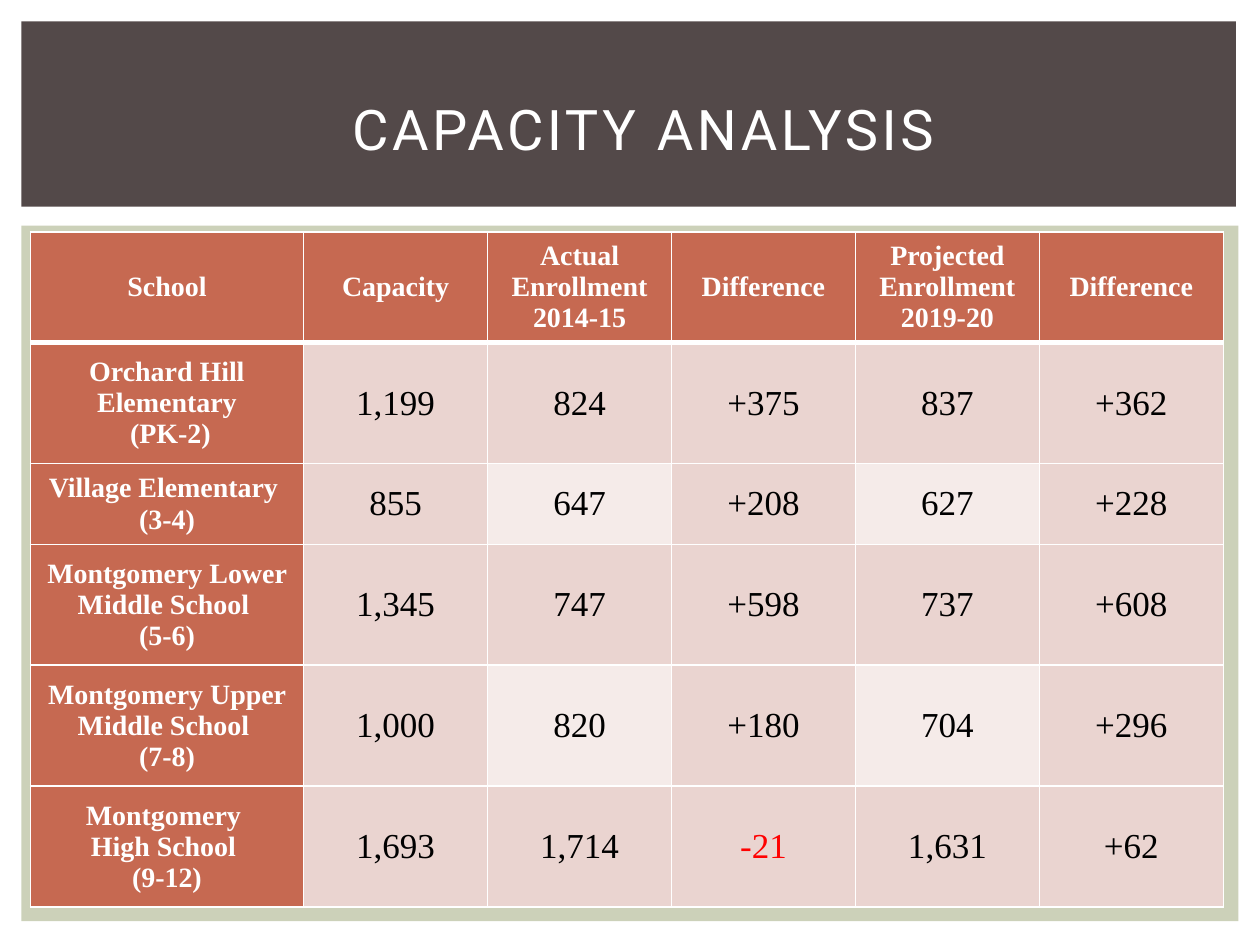
"""Build the capacity analysis slide: a title band above an enrollment table."""
import dataclasses

import lxml.etree
import pptx
import pptx.dml.color
import pptx.enum.shapes
import pptx.enum.text
import pptx.oxml.ns
import pptx.util

EMU_PER_PX = 9144
COLUMN_WIDTHS = [217] + [146] * 5
ROW_HEIGHTS = [88, 96, 64, 96, 96, 96]
ROWS = [
    ["School", "Capacity", "Actual\nEnrollment 2014-15", "Difference",
     "Projected Enrollment 2019-20", "Difference"],
    ["Orchard Hill Elementary\n (PK-2)", "1,199", "824", "+375", "837", "+362"],
    ["Village Elementary \n(3-4)", "855", "647", "+208", "627", "+228"],
    ["Montgomery Lower Middle School \n(5-6)", "1,345", "747", "+598", "737", "+608"],
    ["Montgomery Upper Middle School \n(7-8)", "1,000", "820", "+180", "704", "+296"],
    ["Montgomery \nHigh School \n(9-12)", "1,693", "1,714", "-21", "1,631", "+62"],
]


@dataclasses.dataclass(frozen=True)
class Theme:
    """Colours, fonts and type sizes of the slide."""
    white: str = "FFFFFF"
    black: str = "000000"
    negative: str = "FF0000"
    panel: str = "CCD1B9"
    band: str = "534949"
    heading: str = "C66951"
    tint: str = "EAD4D0"
    light_tint: str = "F5EBE9"
    title_font: str = "Roboto"
    table_font: str = "Times New Roman"
    title_size: int = 32
    heading_size: int = 16
    value_size: int = 20


THEME = Theme()


def px(n):
    """Turn px, at 100 to the inch, into EMU."""
    return pptx.util.Emu(n * EMU_PER_PX)


def set_fill(fill, color):
    """Give a fill one solid colour."""
    fill.solid()
    fill.fore_color.rgb = pptx.dml.color.RGBColor.from_string(color)


def style_paragraph(p, font, size, color, bold=False):
    """Centre a paragraph and set its font."""
    p.alignment = pptx.enum.text.PP_ALIGN.CENTER
    p.font.name = font
    p.font.size = pptx.util.Pt(size)
    p.font.bold = bold
    p.font.color.rgb = pptx.dml.color.RGBColor.from_string(color)


def add_title(slide, text, left, top, width, height):
    """Move and format the title placeholder."""
    title = slide.shapes.title
    title.left, title.top, title.width, title.height = map(px, (left, top, width, height))
    tf = title.text_frame
    tf.text = text
    tf.word_wrap = True
    tf.vertical_anchor = pptx.enum.text.MSO_ANCHOR.MIDDLE
    p = tf.paragraphs[0]
    style_paragraph(p, THEME.title_font, THEME.title_size, THEME.white)
    p.runs[0].font._element.set("spc", "200")


def add_panel(slide, color, left, top, width, height):
    """Add a plain rectangle behind the title."""
    sp = slide.shapes.add_shape(pptx.enum.shapes.MSO_SHAPE.RECTANGLE,
                                *map(px, (left, top, width, height)))
    sp.shadow.inherit = False
    set_fill(sp.fill, color)
    sp.line.fill.background()
    slide.shapes.title.element.addprevious(sp.element)


def add_borders(cell, widths):
    """Draw white cell borders, with widths in points by side."""
    qn = pptx.oxml.ns.qn
    tc_pr = cell._tc.get_or_add_tcPr()
    for side, width in widths.items():
        ln = lxml.etree.SubElement(tc_pr, qn(f"a:ln{side}"), w=str(pptx.util.Pt(width)))
        solid = lxml.etree.SubElement(ln, qn("a:solidFill"))
        lxml.etree.SubElement(solid, qn("a:srgbClr"), val=THEME.white)


def cell_fill(row, column):
    """Choose the fill of a cell from its place in the table."""
    if row == 0 or column == 0:
        return THEME.heading
    return THEME.light_tint if row % 2 == 0 and column in (2, 4) else THEME.tint


def fill_cell(cell, text, row, column):
    """Write and format one table cell."""
    heading = row == 0 or column == 0
    cell.text = text
    cell.vertical_anchor = pptx.enum.text.MSO_ANCHOR.MIDDLE
    cell.margin_left = cell.margin_right = px(7)
    cell.margin_top = cell.margin_bottom = 0
    widths = {"L": 1, "R": 1, "T": 3 if row == 1 else 1, "B": 3 if row == 0 else 1}
    add_borders(cell, widths)
    set_fill(cell.fill, cell_fill(row, column))
    if heading:
        size, color = THEME.heading_size, THEME.white
    else:
        size = THEME.value_size
        color = THEME.negative if text.startswith("-") else THEME.black
    for p in cell.text_frame.paragraphs:
        style_paragraph(p, THEME.table_font, size, color, heading)


def add_enrollment_table(slide, left, top):
    """Add the table of capacity and enrollment by school."""
    frame = slide.shapes.add_table(len(ROWS), len(COLUMN_WIDTHS), px(left), px(top),
                                   px(sum(COLUMN_WIDTHS)), px(sum(ROW_HEIGHTS)))
    table = frame.table
    table.first_col = True
    for column, width in zip(table.columns, COLUMN_WIDTHS):
        column.width = px(width)
    for row, height in zip(table.rows, ROW_HEIGHTS):
        row.height = px(height)
    for i, texts in enumerate(ROWS):
        for j, text in enumerate(texts):
            fill_cell(table.cell(i, j), text, i, j)


def main():
    """Build and save the slide."""
    prs = pptx.Presentation()
    prs.slide_width, prs.slide_height = px(1000), px(750)
    slide = prs.slides.add_slide(prs.slide_layouts[5])
    set_fill(slide.background.fill, THEME.white)
    add_panel(slide, THEME.panel, 17, 179, 966, 552)
    add_panel(slide, THEME.band, 17, 17, 964, 147)
    add_title(slide, "CAPACITY ANALYSIS", 52, 44, 917, 115)
    add_enrollment_table(slide, 24, 184)
    prs.save("out.pptx")


if __name__ == "__main__":
    main()
